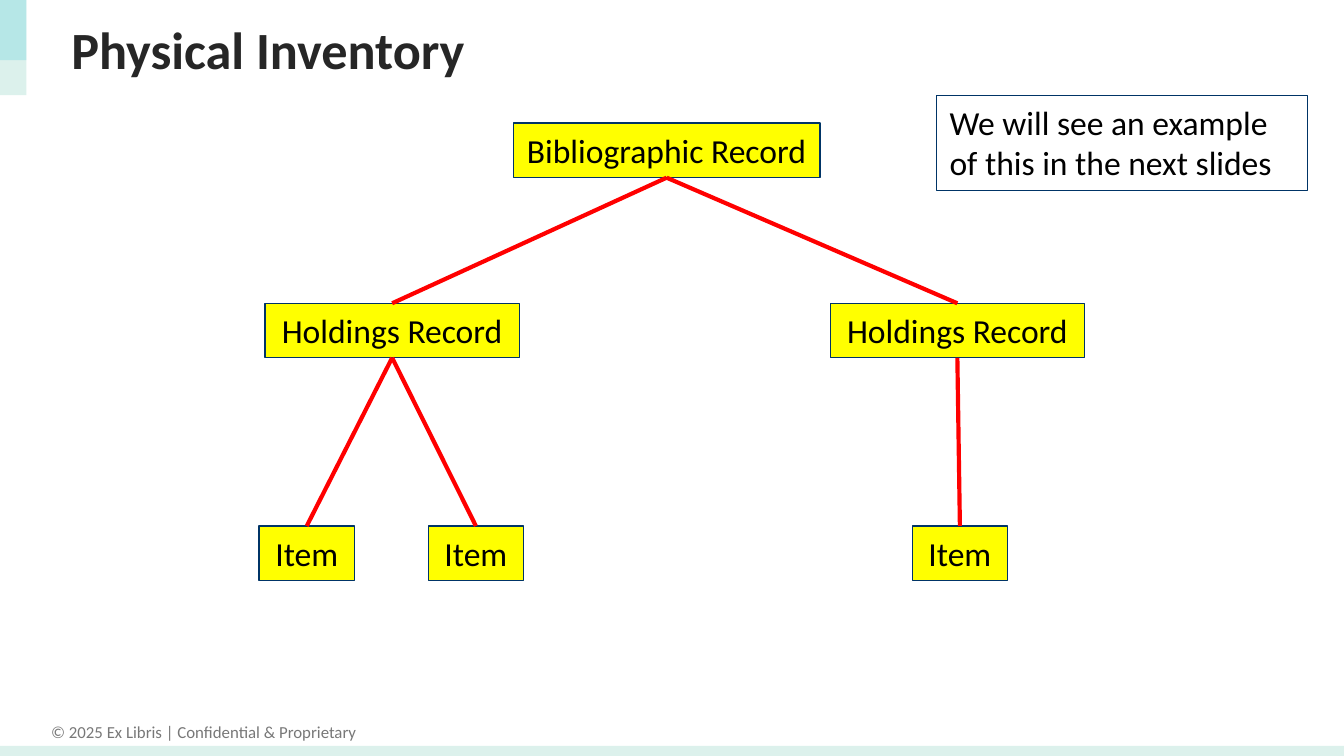
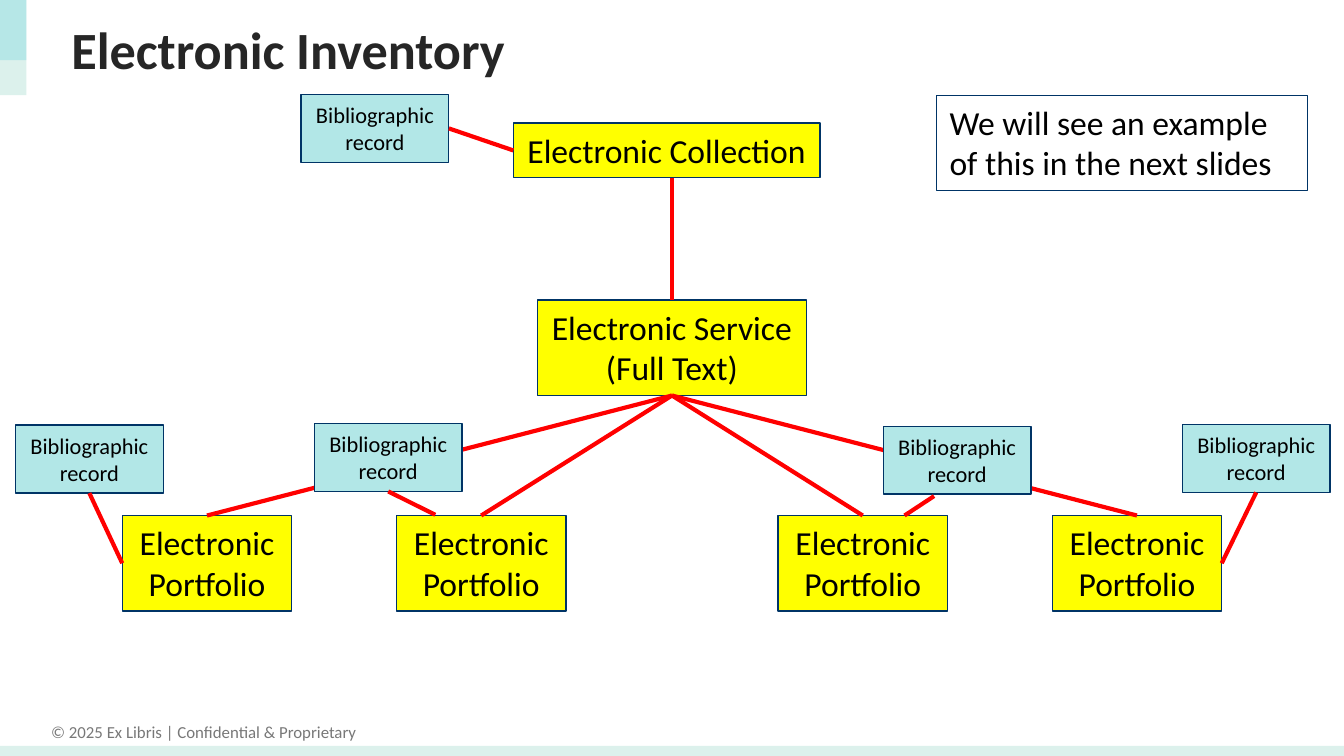
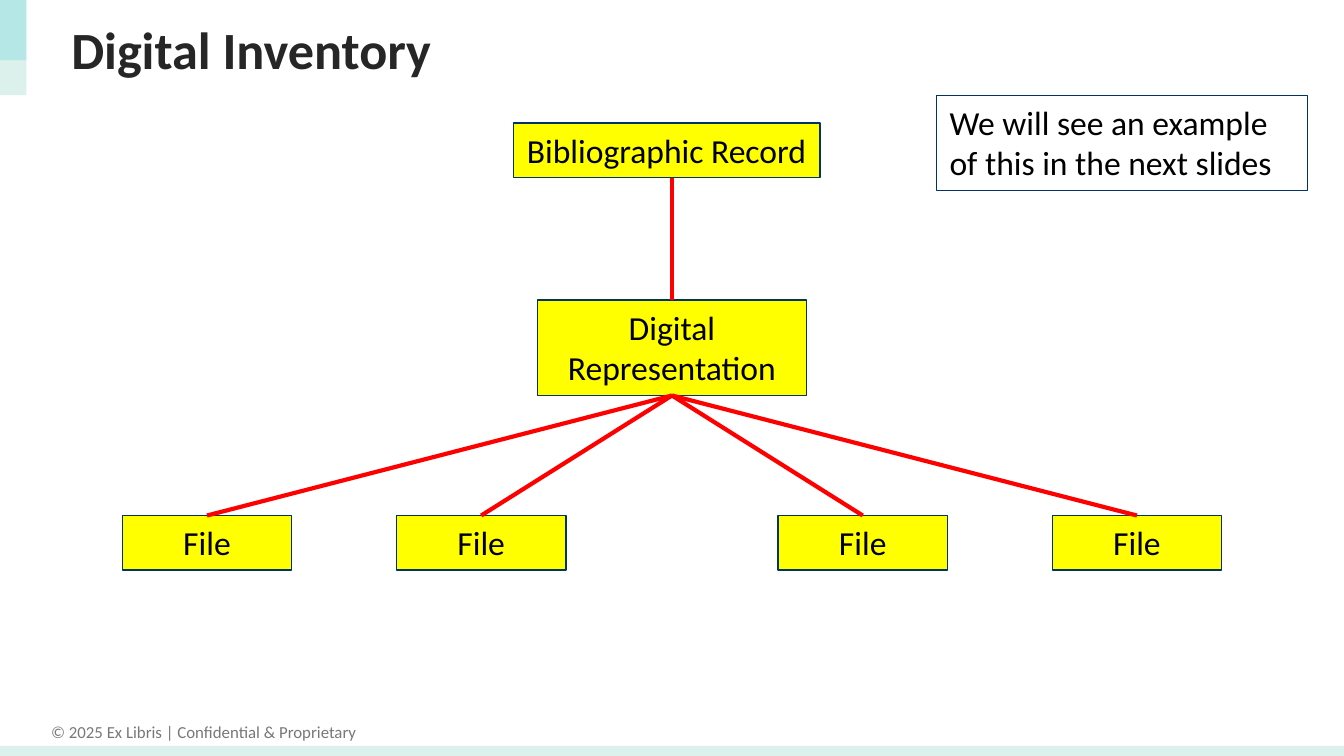
from dataclasses import dataclass

from lxml import etree
from pptx import Presentation
from pptx.dml import color
from pptx.enum import shapes, text
from pptx.oxml import ns
from pptx.util import Pt

TOP, LEFT, LOW, RIGHT = range(4)  # connection sites of a rectangle
NOTE = "We will see an example of this in the next slides"
LEGAL = "© 2025 Ex Libris | Confidential & Proprietary"


@dataclass(frozen=True)
class Theme:
    """Colours, type sizes and box heights in points."""
    font: str = "Calibri"
    ink: str = "000000"
    head: str = "262626"
    grey: str = "787878"
    node: str = "FFFF00"
    record: str = "B2E7E7"
    edge: str = "003466"
    link: str = "FF0000"
    mint: str = "DCF1EC"
    aqua: str = "50CFDA"
    title: int = 28
    body: int = 18
    small: int = 12
    foot: int = 9
    thin: float = 0.75
    thick: float = 2.25
    single: float = 29.2
    double: float = 51.1


class Deck:
    def __init__(self, theme):
        self.theme = theme
        self.show = Presentation()
        self.show.slide_width, self.show.slide_height = Pt(720), Pt(405)
        self.slide = None

    def style(self, frame, size, ink, align, bold=False):
        for para in frame.paragraphs:
            para.alignment = align
            font = para.font
            font.name, font.size, font.bold = self.theme.font, Pt(size), bold
            font.color.rgb = color.RGBColor.from_string(ink)

    def rect(self, x, y, w, h, fill=None):
        shape = self.slide.shapes.add_shape(
            shapes.MSO_SHAPE.RECTANGLE, Pt(x), Pt(y), Pt(w), Pt(h))
        shape.shadow.inherit = False
        if fill:
            shape.fill.solid()
            shape.fill.fore_color.rgb = color.RGBColor.from_string(fill)
        else:
            shape.fill.background()
        return shape

    def band(self, x, y, w, h, fill, alpha=None):
        shape = self.rect(x, y, w, h, fill)
        shape.line.fill.background()
        if alpha:
            tone = shape.fill._xPr.find(".//" + ns.qn("a:srgbClr"))
            etree.SubElement(tone, ns.qn("a:alpha"), val=str(alpha * 1000))

    def box(self, words, x, y, w, h, fill=None, size=None,
            align=text.PP_ALIGN.CENTER):
        t = self.theme
        shape = self.rect(x, y, w, h, fill)
        shape.line.width = Pt(t.thin)
        shape.line.color.rgb = color.RGBColor.from_string(t.edge)
        frame = shape.text_frame
        frame.text = words
        frame.word_wrap = True
        frame.vertical_anchor = text.MSO_ANCHOR.TOP
        frame.auto_size = text.MSO_AUTO_SIZE.SHAPE_TO_FIT_TEXT
        self.style(frame, size or t.body, t.ink, align)
        return shape

    def node(self, words, x, y, w, h=None):
        return self.box(words, x, y, w, h or self.theme.single, self.theme.node)

    def record(self, x, y):
        return self.box("Bibliographic record", x, y, 79.2, 36.4,
                        self.theme.record, self.theme.small)

    def link(self, start, end):
        """Each end is a (shape, site) pair or an (x, y) point."""
        line = self.slide.shapes.add_connector(
            shapes.MSO_CONNECTOR.STRAIGHT, 0, 0, 0, 0)
        if isinstance(start[0], (int, float)):
            line.begin_x, line.begin_y = map(Pt, start)
        else:
            line.begin_connect(*start)
        if isinstance(end[0], (int, float)):
            line.end_x, line.end_y = map(Pt, end)
        else:
            line.end_connect(*end)
        line.line.width = Pt(self.theme.thick)
        line.line.color.rgb = color.RGBColor.from_string(self.theme.link)
        etree.SubElement(line._element.spPr, ns.qn("a:effectLst"))

    def footer(self):
        box = self.slide.shapes.add_textbox(Pt(19.4), Pt(383), Pt(179.3), Pt(18))
        frame = box.text_frame
        frame.text = LEGAL
        frame.word_wrap = False
        frame.auto_size = text.MSO_AUTO_SIZE.SHAPE_TO_FIT_TEXT
        self.style(frame, self.theme.foot, self.theme.grey,
                   text.PP_ALIGN.CENTER)

    def page(self, title):
        t = self.theme
        self.slide = self.show.slides.add_slide(self.show.slide_layouts[5])
        # Bands and footer
        self.footer()
        self.band(0, 399.6, 720, 5.4, t.mint)
        self.band(0, 0, 14.2, 51, t.mint)
        self.band(0, 0, 14.2, 32.2, t.aqua, 27)
        # Title
        head = self.slide.shapes.title
        head.left, head.top, head.width, head.height = map(
            Pt, (31, 5.6, 663, 45.4))
        frame = head.text_frame
        frame.text = title
        frame.auto_size = text.MSO_AUTO_SIZE.NONE
        frame.vertical_anchor = text.MSO_ANCHOR.MIDDLE
        self.style(frame, t.title, t.head, text.PP_ALIGN.LEFT, True)
        frame.paragraphs[0].line_spacing = 0.9
        # Note
        self.box(NOTE, 501.6, 51.1, 198.9, t.double, align=text.PP_ALIGN.LEFT)

    def root(self, words):
        return self.node(words, 275, 66, 164.3)

    def tree(self, root, mid, leaf, high):
        """A root, one middle box and four leaves mirrored about the centre."""
        axis, wide, row = 360, 90.8, 276.2
        top = self.root(root)
        hub = self.node(mid, axis - 72, 160.8, 144, self.theme.double)
        self.link((axis, 95.2), (hub, TOP))
        leaves = [self.node(leaf, axis + off - wide / 2, row, wide, high)
                  for off in (-249.1, -102.2, 102.2, 249.1)]
        for item in leaves:
            self.link((hub, LOW), (item, TOP))
        return top, leaves


def physical(deck):
    deck.page("Physical Inventory")
    root = deck.root("Bibliographic Record")
    for x, items in ((142, (138.8, 229.4)), (444.8, (488.7,))):
        hold = deck.node("Holdings Record", x, 162.5, 136.2)
        deck.link((root, LOW), (hold, TOP))
        for left in items:
            item = deck.node("Item", left, 281.8, 51.1)
            deck.link((hold, LOW), (item, TOP))


def electronic(deck):
    deck.page("Electronic Inventory")
    top, leaves = deck.tree("Electronic Collection",
                            "Electronic Service\n(Full Text)",
                            "Electronic Portfolio", deck.theme.double)
    # Records lie over the lines from the service
    lead, first, second, third, fourth = [
        deck.record(x, y) for x, y in (
            (161.3, 50.6), (8.3, 227.8), (168.4, 226.9),
            (473.2, 228.4), (633.4, 227.4))]
    deck.link((lead, RIGHT), (top, LEFT))
    deck.link((first, LOW), (leaves[0], LEFT))
    deck.link((fourth, LOW), (leaves[3], RIGHT))
    deck.link((second, LOW), (233.2, 275.8))
    deck.link((500.4, 265.8), (484.6, 276.2))


def digital(deck):
    deck.page("Digital Inventory")
    deck.tree("Bibliographic Record", "Digital Representation", "File",
              deck.theme.single)


def main():
    deck = Deck(Theme())
    for build in (physical, electronic, digital):
        build(deck)
    deck.show.save("out.pptx")


if __name__ == "__main__":
    main()
